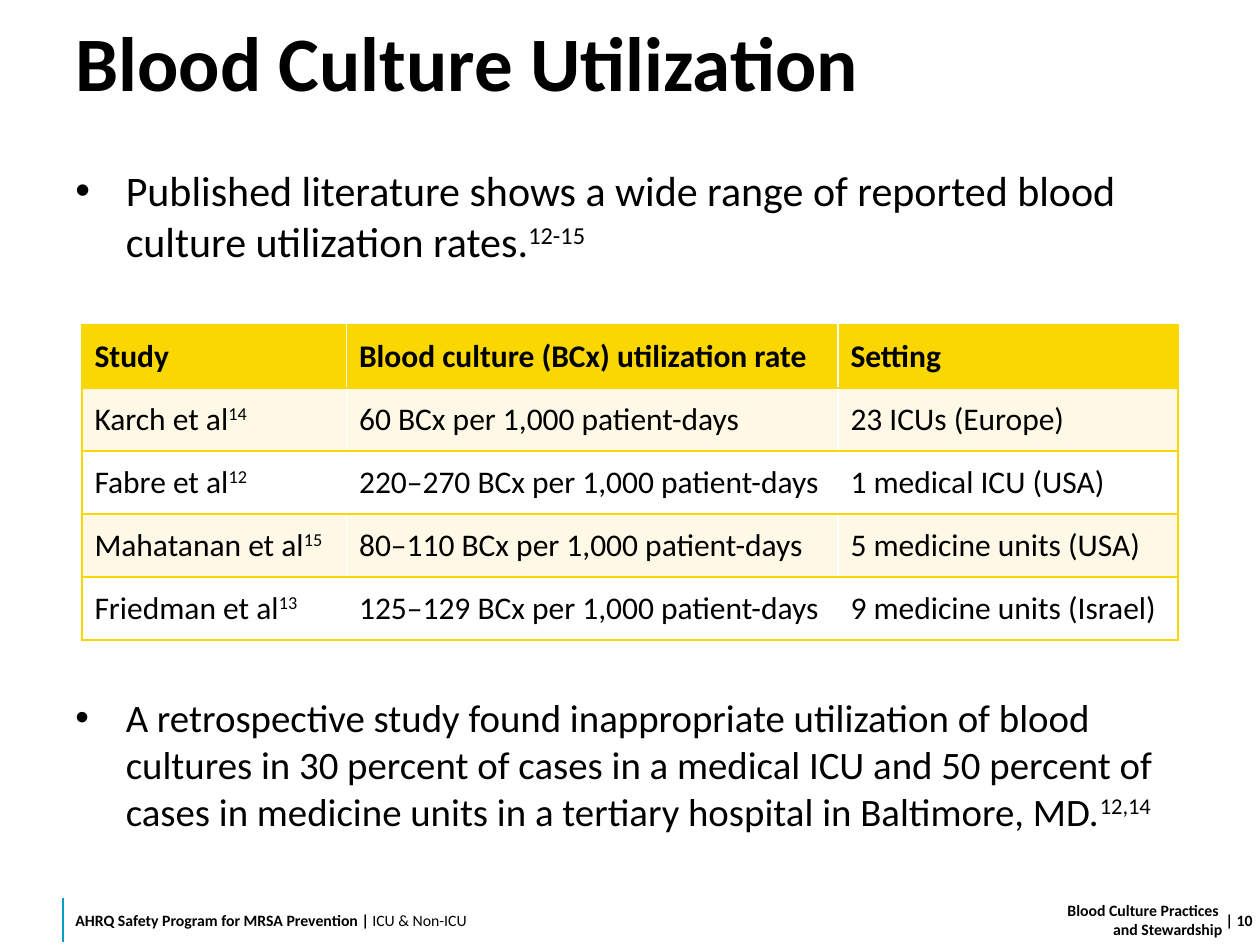
import pptx
import pptx.util
import pptx.dml.color
import pptx.enum.shapes
import pptx.enum.text
import pptx.oxml.ns
import lxml.etree

Inches, Pt = pptx.util.Inches, pptx.util.Pt
Align, Anchor = pptx.enum.text.PP_ALIGN, pptx.enum.text.MSO_ANCHOR
W, H = 10, 7.5
LEFT, WIDE = 0.05 * W, 0.9 * W
FOOT, DEEP = 7.1, 0.4
GOLD, CREAM, WHITE, BLACK, TEAL = "FAD701", "FEF8E7", "FFFFFF", "000000", "009EC2"

TITLE = "Blood Culture Utilization"
POINTS = [
    (1.26, 1.2, 24, "Published literature shows a wide range of reported blood "
     "culture utilization rates.", "12-15"),
    (5.46, 1.52, 22.2, "A retrospective study found inappropriate utilization of blood "
     "cultures in 30 percent of cases in a medical ICU and 50 percent of cases in "
     "medicine units in a tertiary hospital in Baltimore, MD.", "12,14"),
]
HEAD = ("Study", "Blood culture (BCx) utilization rate", "Setting")
STUDIES = [
    ("Karch et al", "14", "60 BCx per 1,000 patient-days", "23 ICUs (Europe)"),
    ("Fabre et al", "12", "220–270 BCx per 1,000 patient-days", "1 medical ICU (USA)"),
    ("Mahatanan et al", "15", "80–110 BCx per 1,000 patient-days", "5 medicine units (USA)"),
    ("Friedman et al", "13", "125–129 BCx per 1,000 patient-days", "9 medicine units (Israel)"),
]
COLS, ROW = (2.1, 3.9, 2.7), 0.5


def color(code):
    return pptx.dml.color.RGBColor.from_string(code)


def tag(parent, name, **attrs):
    return lxml.etree.SubElement(parent, pptx.oxml.ns.qn(name), attrs)


def style(run, size, bold=False):
    font = run.font
    font.name, font.size, font.bold = "Calibri", Pt(size), bold
    font.color.rgb = color(BLACK)


def write(para, text, size, bold=False, note=""):
    para.text = text
    if note:
        para.add_run().text = note
    for run in para.runs:
        style(run, size, bold)
    if note:
        para.runs[-1].font._element.set("baseline", "30000")


def box(slide, x, y, w, h, pads=(0.1, 0.05, 0.1, 0.05), anchor=Anchor.MIDDLE):
    frame = slide.shapes.add_textbox(*map(Inches, (x, y, w, h))).text_frame
    frame.word_wrap = True
    frame.vertical_anchor = anchor
    (frame.margin_left, frame.margin_top,
     frame.margin_right, frame.margin_bottom) = map(Inches, pads)
    return frame.paragraphs[0]


def point(slide, y, h, size, text, note):
    para = box(slide, LEFT, y, WIDE, h, anchor=Anchor.TOP)
    props = para._p.get_or_add_pPr()
    props.set("marL", str(Inches(0.4)))
    props.set("indent", str(Inches(-0.4)))
    tag(props, "a:buFont", typeface="Arial")
    tag(props, "a:buChar", char="•")
    write(para, text, size, note=note)


def edge(cell, sides):
    props = cell._tc.get_or_add_tcPr()
    for side in sides:
        line = tag(props, "a:ln" + side, w=str(Pt(1)))
        tag(tag(line, "a:solidFill"), "a:srgbClr", val=GOLD)


def grid(slide):
    rows = [(HEAD, "")] + [((name, rate, place), note) for name, note, rate, place in STUDIES]
    table = slide.shapes.add_table(
        len(rows), len(COLS), Inches(0.65), Inches(2.58),
        Inches(sum(COLS)), Inches(ROW * len(rows))).table
    for col, width in zip(table.columns, COLS):
        col.width = Inches(width)
    for r, (texts, note) in enumerate(rows):
        table.rows[r].height = Inches(ROW)
        for c, text in enumerate(texts):
            cell = table.cell(r, c)
            edge(cell, ("LTB", "TB", "RTB")[c])
            cell.fill.solid()
            cell.fill.fore_color.rgb = color(GOLD if r == 0 else CREAM if r % 2 else WHITE)
            cell.vertical_anchor = Anchor.MIDDLE
            write(cell.text_frame.paragraphs[0], text, 18, r == 0, "" if c else note)


def footer(slide):
    bar = slide.shapes.add_connector(
        pptx.enum.shapes.MSO_CONNECTOR.STRAIGHT,
        *map(Inches, (LEFT, 7.13, LEFT, 7.48)))
    bar.line.color.rgb = color(TEAL)
    bar.line.width = Pt(1)
    tag(bar._element.spPr, "a:effectLst")

    para = box(slide, LEFT, FOOT, 4.1, DEEP, (0.1, 0, 0.1, 0))
    write(para, "AHRQ Safety Program for MRSA Prevention | ", 9, True)
    unit = para.add_run()
    unit.text = "ICU & Non-ICU"
    style(unit, 9)

    para = box(slide, 7.1, FOOT, 2.6, DEEP, (0.1, 0.05, 0, 0.05))
    para.alignment = Align.RIGHT
    write(para, "Blood Culture Practices \vand Stewardship", 9, True)
    write(box(slide, 9.7, FOOT, 0.3, DEEP, (0, 0.05, 0, 0.05)), " | 10", 9, True)


def main():
    deck = pptx.Presentation()
    deck.slide_width, deck.slide_height = Inches(W), Inches(H)
    slide = deck.slides.add_slide(deck.slide_layouts[6])
    para = box(slide, LEFT, 0, WIDE, 1, (0.1, 0.1, 0.1, 0.05))
    para.line_spacing = 0.9
    write(para, TITLE, 44, True)
    for item in POINTS:
        point(slide, *item)
    grid(slide)
    footer(slide)
    deck.save("out.pptx")


if __name__ == "__main__":
    main()
